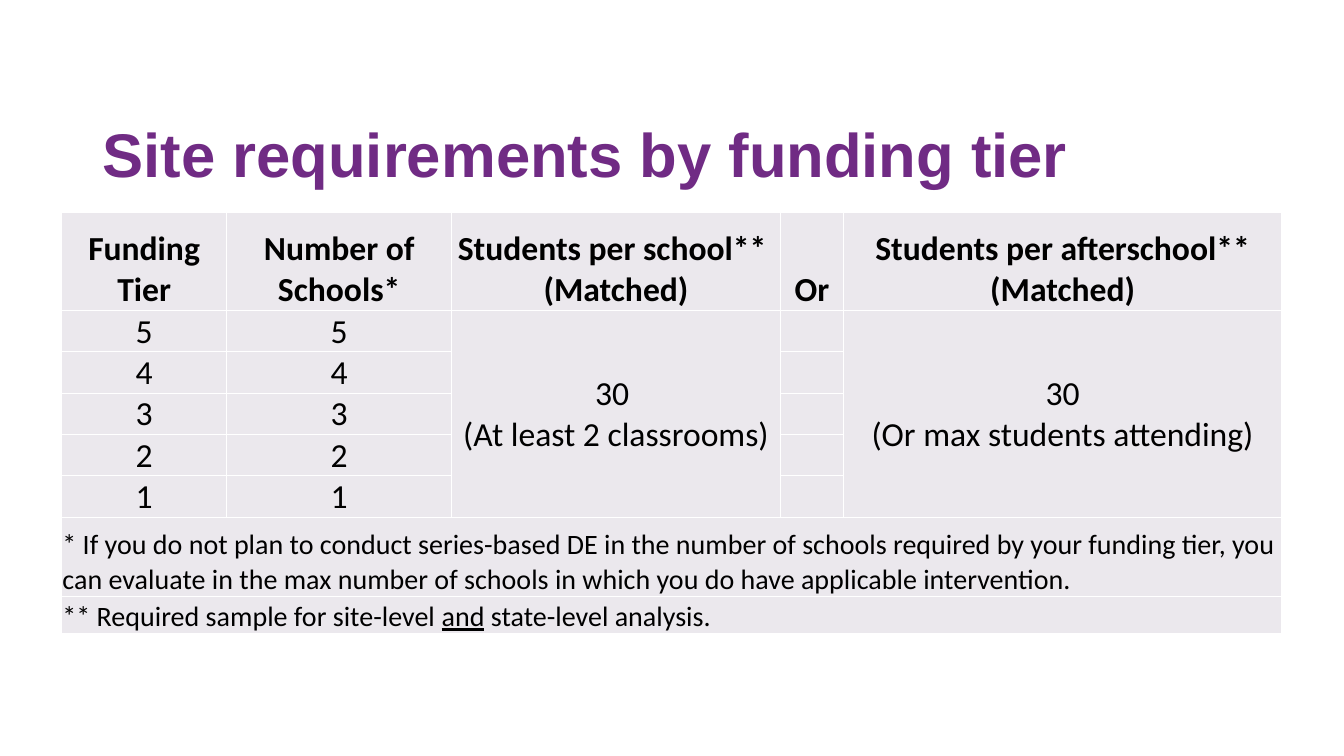
from pptx import Presentation
from pptx import util as u
from pptx.dml import color
from pptx.enum import text
from pptx.oxml import ns, parse_xml

INK, PLUM, TINT, WHITE = "000000", "702B84", "EBE8ED", "FFFFFF"
MID, LOW = text.MSO_ANCHOR.MIDDLE, text.MSO_ANCHOR.BOTTOM
LEFT, CENTER = text.PP_ALIGN.LEFT, text.PP_ALIGN.CENTER


def rgb(value):
    return color.RGBColor.from_string(value)


class Deck:
    def __init__(self):
        self.prs = Presentation()
        self.prs.slide_width = u.Inches(13.33)
        self.prs.slide_height = u.Inches(7.5)
        self.slide = self.prs.slides.add_slide(self.prs.slide_layouts[6])

    def style(self, frame, size, face="Calibri", ink=INK, bold=False, align=LEFT):
        for para in frame.paragraphs:
            para.alignment = align
            font = para.font
            font.name, font.size, font.bold = face, u.Pt(size), bold
            font.color.rgb = rgb(ink)

    def title(self, words, left, top, width, height):
        box = self.slide.shapes.add_textbox(*map(u.Inches, (left, top, width, height)))
        frame = box.text_frame
        frame.word_wrap, frame.vertical_anchor = True, MID
        frame.text = words
        frame.paragraphs[0].line_spacing = 0.9
        self.style(frame, 44, "Arial", PLUM, True)

    def table(self, left, top, cols, rows):
        """Add an empty tinted table with white rules."""
        size = (left, top, sum(cols), sum(rows))
        grid = self.slide.shapes.add_table(
            len(rows), len(cols), *map(u.Inches, size)).table
        grid.first_row = grid.horz_banding = False
        for col, width in zip(grid.columns, cols):
            col.width = u.Inches(width)
        for row, height in zip(grid.rows, rows):
            row.height = u.Inches(height)
        for cell in grid.iter_cells():
            self.edge(cell)
            cell.fill.solid()
            cell.fill.fore_color.rgb = rgb(TINT)
            cell.margin_left = cell.margin_right = cell.margin_top = u.Inches(0.01)
            cell.margin_bottom = 0
        return grid

    def edge(self, cell):
        """Rule all four sides of a cell."""
        props = cell._tc.get_or_add_tcPr()
        for side in "LRTB":
            props.append(parse_xml(
                f'<a:ln{side} {ns.nsdecls("a")} w="12700"><a:solidFill>'
                f'<a:srgbClr val="{WHITE}"/></a:solidFill></a:ln{side}>'))

    def fill(self, cell, words, size=24, bold=False, align=CENTER, anchor=LOW):
        cell.text_frame.text = words
        cell.vertical_anchor = anchor
        self.style(cell.text_frame, size, bold=bold, align=align)


def main():
    deck = Deck()
    deck.title("Site requirements by funding tier", 0.92, 0.84, 11.5, 1.45)

    tiers = [5, 4, 3, 2, 1]
    heads = ["Funding Tier", "Number of Schools*",
             "Students per school** \n(Matched)", "Or",
             "Students per afterschool** (Matched)"]
    grid = deck.table(0.61, 2.11, [1.64, 2.23, 3.26, 0.63, 4.34],
                      [0.97] + [0.41] * len(tiers) + [0.79, 0.37])
    for col, head in enumerate(heads):
        deck.fill(grid.cell(0, col), head, bold=True)
    for row, tier in enumerate(tiers, 1):
        for col in (0, 1):
            deck.fill(grid.cell(row, col), str(tier))

    samples = {2: "30 \n(At least 2 classrooms)",
               4: "30\n(Or max students attending)"}
    for col, sample in samples.items():
        cell = grid.cell(1, col)
        cell.merge(grid.cell(len(tiers), col))
        deck.fill(cell, sample, anchor=MID)

    notes = ["* If you do not plan to conduct series-based DE in the number of "
             "schools required by your funding tier, you can evaluate in the max "
             "number of schools in which you do have applicable intervention.",
             "** Required sample for site-level "]
    for row, note in enumerate(notes, len(tiers) + 1):
        cell = grid.cell(row, 0)
        cell.merge(grid.cell(row, len(heads) - 1))
        deck.fill(cell, note, 20, align=LEFT)
    para = cell.text_frame.paragraphs[0]
    for words, line in (("and", True), (" state-level analysis.", False)):
        run = para.add_run()
        run.text, run.font.underline = words, line

    deck.prs.save("out.pptx")


if __name__ == "__main__":
    main()
